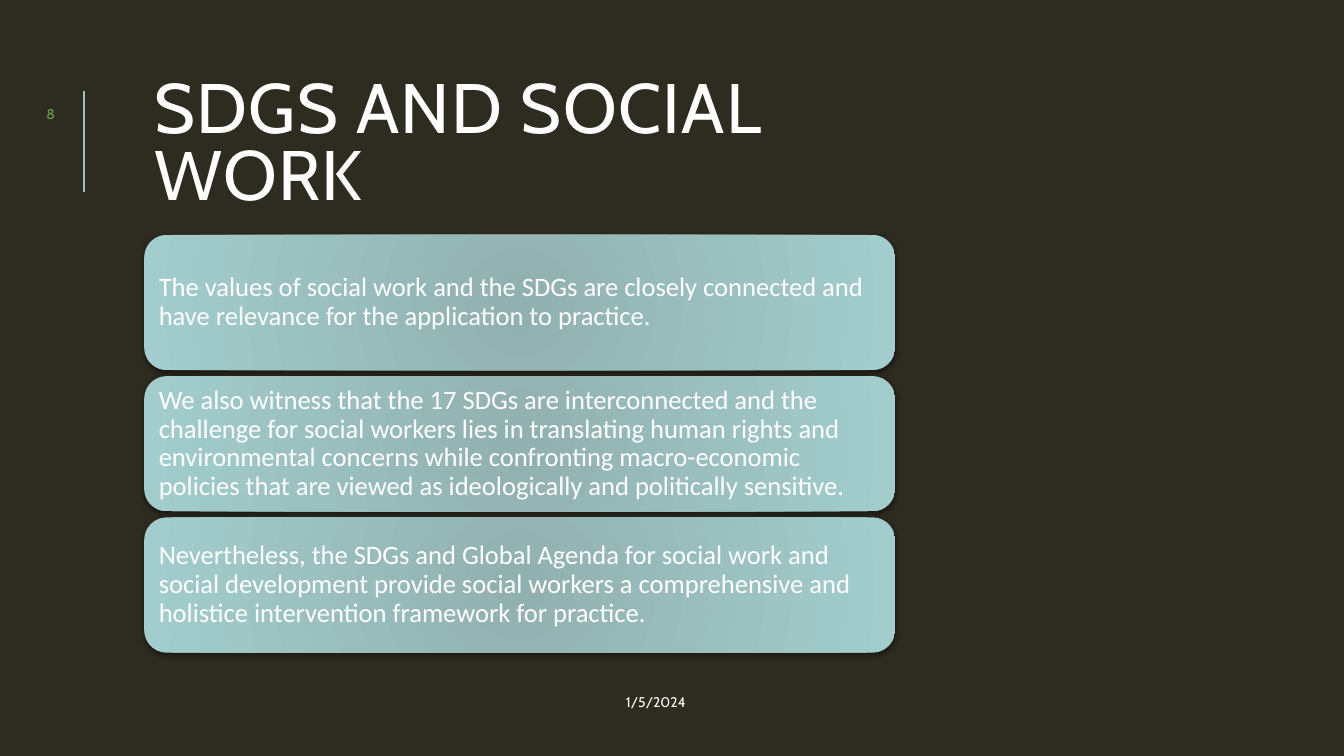
from lxml.etree import SubElement as Sub
from pptx import Presentation
from pptx.dml.color import RGBColor as RGB
from pptx.enum.shapes import MSO_CONNECTOR as Conn, MSO_SHAPE as Shape
from pptx.enum.text import MSO_ANCHOR as Anchor, MSO_AUTO_SIZE as Fit, PP_ALIGN as Align
from pptx.oxml.ns import qn
from pptx.util import Pt

INK = {
    "back": "2E2B21", "rule": "9CBEBD", "title": "FFFFFE", "page": "6CA33D",
    "core": "91B1B0", "edge": "A2CDCC", "text": "FFFFFF", "shade": "000000",
}
CARDS = [
    "The values of social work and the SDGs are closely connected and have "
    "relevance for the application to practice.",
    "We also witness that the 17 SDGs are interconnected and the challenge for "
    "social workers lies in translating human rights and environmental concerns "
    "while confronting macro-economic policies that are viewed as ideologically "
    "and politically sensitive.",
    "Nevertheless, the SDGs and Global Agenda for social work and social "
    "development provide social workers a comprehensive and holistice "
    "intervention framework for practice.",
]


def hue(name):
    return RGB.from_string(INK[name])


def write(shape, text, size, font, color, lead=1.0, after=0):
    frame = shape.text_frame
    frame.word_wrap = True
    frame.auto_size = Fit.NONE
    frame.vertical_anchor = Anchor.MIDDLE
    para = frame.paragraphs[0]
    para.alignment = Align.LEFT
    para.line_spacing = lead
    para.space_after = Pt(after)
    run = para.add_run()
    run.text = text
    run.font.size = Pt(size)
    run.font.name = font
    run.font.color.rgb = hue(color)


def head(slide, x, y, w, h):
    title = slide.shapes.title
    title.left, title.top, title.width, title.height = Pt(x), Pt(y), Pt(w), Pt(h)
    write(title, "SDGS AND SOCIAL WORK", 50, "Cabin", "title", 0.8)
    for props in title.element.iter(qn("a:rPr")):
        props.set("spc", "100")


def rule(slide, x, y, h):
    line = slide.shapes.add_connector(Conn.STRAIGHT, Pt(x), Pt(y + h), Pt(x), Pt(y))
    line.line.color.rgb = hue("rule")
    line.line.width = Pt(1.5)
    Sub(line.element.spPr, qn("a:effectLst"))


def label(slide, x, y, w, h, text, color, lead=1.0):
    box = slide.shapes.add_textbox(Pt(x), Pt(y), Pt(w), Pt(h))
    write(box, text, 10, "Cabin", color, lead, 6)


def glow(card):
    """Fill the card with a round gradient, darkest at its centre."""
    card.fill.gradient()
    for stop, name in zip(card.fill.gradient_stops, ("core", "edge")):
        stop.color.rgb = hue(name)
    grad = card.element.spPr.find(qn("a:gradFill"))
    grad.remove(grad.find(qn("a:lin")))
    ring = Sub(grad, qn("a:path"), {"path": "circle"})
    Sub(ring, qn("a:fillToRect"), {side: "50000" for side in "ltrb"})


def shade(card):
    card.shadow.inherit = False
    fx = card.element.spPr.find(qn("a:effectLst"))
    drop = Sub(fx, qn("a:outerShdw"), blurRad=str(Pt(4)), dist=str(Pt(1)),
               dir="5400000", algn="ctr", rotWithShape="0")
    tint = Sub(drop, qn("a:srgbClr"), val=INK["shade"])
    Sub(tint, qn("a:alpha"), val="50000")


def stack(slide, x, y, w, h, gap=4.3):
    """Share the box's height among the cards."""
    tall = (h - gap * (len(CARDS) - 1)) / len(CARDS)
    for i, text in enumerate(CARDS):
        top = y + i * (tall + gap)
        card = slide.shapes.add_shape(
            Shape.ROUNDED_RECTANGLE, Pt(x), Pt(top), Pt(w), Pt(tall))
        glow(card)
        card.line.fill.background()
        shade(card)
        frame = card.text_frame
        frame.margin_left = frame.margin_right = Pt(5.7)
        frame.margin_top = frame.margin_bottom = Pt(5.7)
        write(card, text, 19, "Calibri", "text", 0.9)


def main():
    deck = Presentation()
    deck.slide_width, deck.slide_height = Pt(960), Pt(540)
    slide = deck.slides.add_slide(deck.slide_layouts[5])
    slide.background.fill.solid()
    slide.background.fill.fore_color.rgb = hue("back")
    rule(slide, 60, 65, 72)
    head(slide, 103, 63.4, 536.4, 82.8)
    label(slide, 26, 62.6, 64, 39.6, "8", "page", 0.9)
    label(slide, 440, 489, 199.4, 24.5, "1/5/2024", "title")
    stack(slide, 103, 167.8, 536.4, 298.4)
    deck.save("out.pptx")


if __name__ == "__main__":
    main()
